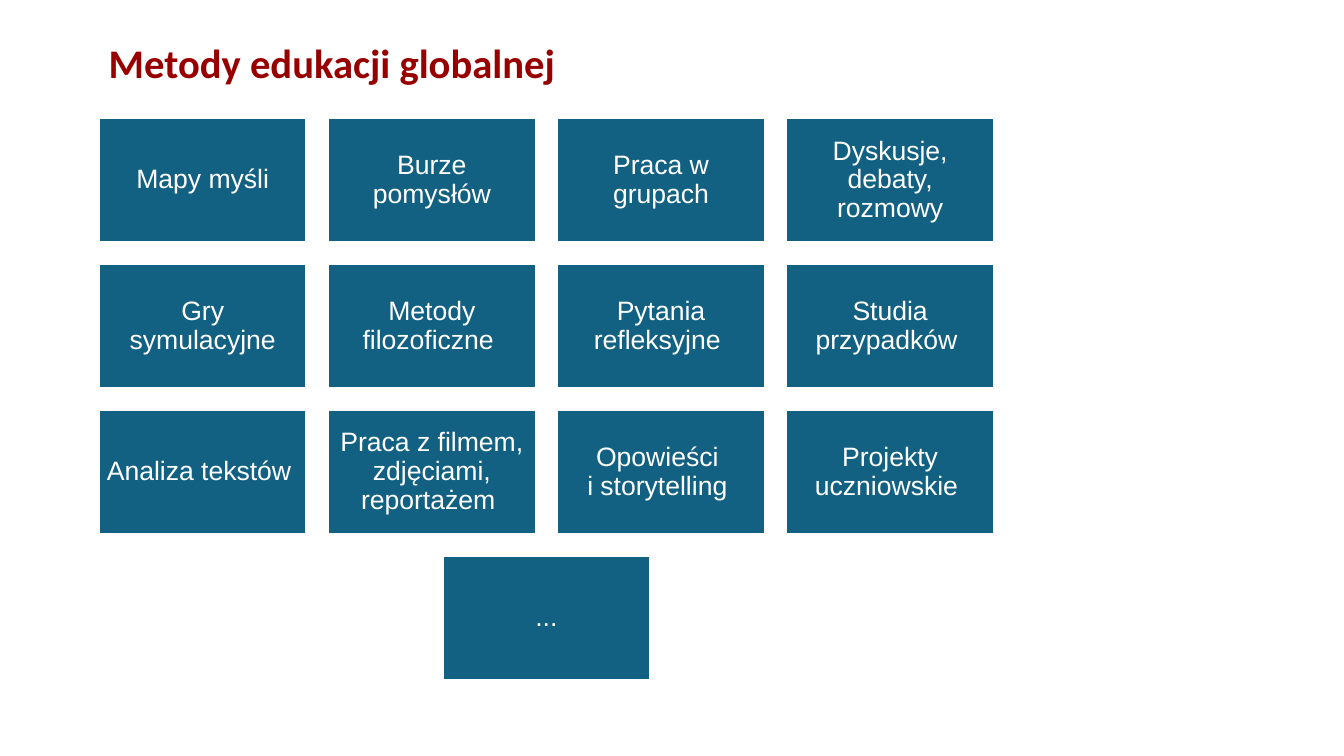
from pptx import Presentation
from pptx.dml.color import RGBColor
from pptx.enum.shapes import MSO_SHAPE
from pptx.enum.text import MSO_ANCHOR, MSO_AUTO_SIZE, PP_ALIGN
from pptx.util import Pt

RECTANGLE = MSO_SHAPE.RECTANGLE
TOP, MIDDLE = MSO_ANCHOR.TOP, MSO_ANCHOR.MIDDLE
LEFT, CENTER = PP_ALIGN.LEFT, PP_ALIGN.CENTER
FIXED_SIZE = MSO_AUTO_SIZE.NONE
TITLE_ONLY = 5

METHOD_ROWS = [
    ["Mapy myśli", "Burze pomysłów", "Praca w grupach", "Dyskusje, debaty, rozmowy"],
    ["Gry symulacyjne", "Metody filozoficzne ", "Pytania refleksyjne ", "Studia przypadków "],
    ["Analiza tekstów ", "Praca z filmem, zdjęciami, reportażem ",
     "Opowieści \vi storytelling ", "Projekty uczniowskie "],
    ["..."],
]
COLUMNS = 4
GRID_LEFT, GRID_TOP = 70.4, 84.2
TILE_WIDTH, TILE_HEIGHT, GAP = 148.8, 89.3, 14.88


def color(value):
    return RGBColor.from_string(value)


def write_text(shape, text, *, font, size, text_color, bold=False, align=LEFT,
               anchor=TOP, spacing=1.0, inset=7.2):
    frame = shape.text_frame
    frame.word_wrap = True
    frame.auto_size = FIXED_SIZE
    frame.vertical_anchor = anchor
    frame.margin_left = frame.margin_right = Pt(inset)
    frame.margin_top = frame.margin_bottom = Pt(inset)
    paragraph = frame.paragraphs[0]
    paragraph.text = text
    paragraph.alignment = align
    paragraph.line_spacing = spacing
    for run in paragraph.runs:
        run.font.name = font
        run.font.size = Pt(size)
        run.font.bold = bold
        run.font.color.rgb = color(text_color)


class MethodSlide:
    title_color = "980000"
    tile_color = "126082"
    light_color = "FFFFFF"

    def __init__(self, presentation):
        self.slide = presentation.slides.add_slide(presentation.slide_layouts[TITLE_ONLY])

    def title(self, text, left, top, width, height):
        shape = self.slide.shapes.title
        shape.left, shape.top = Pt(left), Pt(top)
        shape.width, shape.height = Pt(width), Pt(height)
        write_text(shape, text, font="Calibri", size=29, text_color=self.title_color,
                   bold=True, spacing=1.15)

    def tile(self, text, left, top):
        shape = self.slide.shapes.add_shape(
            RECTANGLE, Pt(left), Pt(top), Pt(TILE_WIDTH), Pt(TILE_HEIGHT))
        shape.shadow.inherit = False
        shape.fill.solid()
        shape.fill.fore_color.rgb = color(self.tile_color)
        shape.line.color.rgb = color(self.light_color)
        shape.line.width = Pt(2)
        write_text(shape, text, font="Arial", size=19, text_color=self.light_color,
                   align=CENTER, anchor=MIDDLE, spacing=0.9, inset=5.7)

    def tile_grid(self, rows):
        for row_index, row in enumerate(rows):
            indent = (COLUMNS - len(row)) / 2
            top = GRID_TOP + row_index * (TILE_HEIGHT + GAP)
            for column, text in enumerate(row):
                self.tile(text, GRID_LEFT + (column + indent) * (TILE_WIDTH + GAP), top)


def main():
    presentation = Presentation()
    presentation.slide_width, presentation.slide_height = Pt(960), Pt(540)
    method_slide = MethodSlide(presentation)
    method_slide.title("Metody edukacji globalnej", GRID_LEFT, 14.4, 689, 54.7)
    method_slide.tile_grid(METHOD_ROWS)
    presentation.save("out.pptx")


if __name__ == "__main__":
    main()
